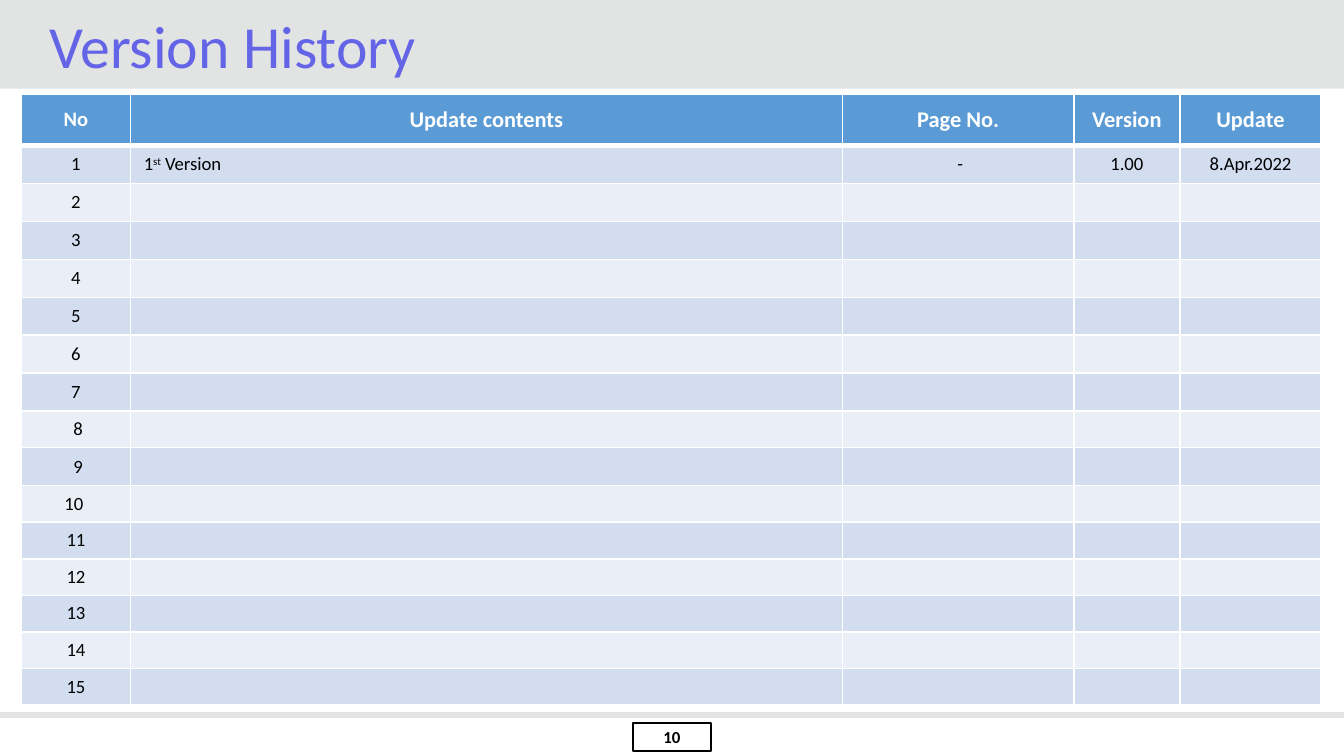
from lxml.etree import SubElement
from pptx import Presentation
from pptx.dml.color import RGBColor
from pptx.enum.shapes import MSO_CONNECTOR, MSO_SHAPE
from pptx.enum.text import MSO_ANCHOR, PP_ALIGN
from pptx.oxml.ns import qn
from pptx.util import Inches, Pt

WIDTH = 10
HEIGHT = WIDTH * 9 / 16
FONT = "Calibri"
COLORS = {
    "band": "E2E3E3",
    "title": "6464E6",
    "header": "5B9BD5",
    "odd": "D2DEEF",
    "even": "EAEFF7",
    "white": "FFFFFF",
    "black": "000000",
}

# Column shares and relative row heights of the history table
COLUMNS = [0.81, 5.3, 1.72, 0.79, 1.05]
ROWS = [0.38] + [0.28] * 7 + [0.27, 0.28] + [0.27] * 6
HEADINGS = ["No", "Update contents", "Page No.", "Version", "Update"]
FIRST_ENTRY = [[("1", 0), ("st", 30000), (" Version", 0)], " -", "1.00", "8.Apr.2022"]
NUMBERS = [str(number) for number in range(1, 8)] + [" 8", " 9", "10 "]
NUMBERS += [str(number) for number in range(11, 16)]


def color(name):
    return RGBColor.from_string(COLORS[name])


def write_text(frame, text, size=10, fill="black", bold=False,
               align=PP_ALIGN.CENTER, line_spacing=None):
    """Write a string, or a list of (string, baseline) runs, in one paragraph."""
    paragraph = frame.paragraphs[0]
    paragraph.alignment = align
    if line_spacing:
        paragraph.line_spacing = line_spacing
    runs = [(text, 0)] if isinstance(text, str) else text
    for words, baseline in runs:
        if not words:
            continue
        run = paragraph.add_run()
        run.text = words
        font = run.font
        font.name, font.size, font.bold = FONT, Pt(size), bold
        font.color.rgb = color(fill)
        if baseline:
            run._r.get_or_add_rPr().set("baseline", str(baseline))
    # The end mark sets the line height of an empty cell
    SubElement(paragraph._p, qn("a:endParaRPr")).set("sz", str(size * 100))


def set_margins(frame, left, top, right, bottom):
    frame.margin_left, frame.margin_top = Inches(left), Inches(top)
    frame.margin_right, frame.margin_bottom = Inches(right), Inches(bottom)
    frame.vertical_anchor = MSO_ANCHOR.MIDDLE
    frame.word_wrap = True


def add_rectangle(slide, box, fill=None, line=None):
    shape = slide.shapes.add_shape(MSO_SHAPE.RECTANGLE, *map(Inches, box))
    shape.shadow.inherit = False
    if fill:
        shape.fill.solid()
        shape.fill.fore_color.rgb = color(fill)
    else:
        shape.fill.background()
    if line:
        shape.line.color.rgb = color(line)
        shape.line.width = Pt(1)
    else:
        shape.line.fill.background()
    return shape


def add_title_band(slide, box):
    left, top, width, height = box
    add_rectangle(slide, box, fill="band")
    title = slide.shapes.add_textbox(
        Inches(left + 0.027 * width), Inches(top + 0.01),
        Inches(0.934 * width), Inches(height))
    set_margins(title.text_frame, 0.1, 0.05, 0.1, 0)
    write_text(title.text_frame, "Version History", size=32, fill="title",
               align=PP_ALIGN.LEFT, line_spacing=0.9)


def add_footer(slide, box):
    left, top, width, height = box
    # Rule along the top of the footer
    rule = slide.shapes.add_connector(
        MSO_CONNECTOR.STRAIGHT, Inches(left), Inches(top),
        Inches(left + width), Inches(top))
    rule.line.color.rgb = color("band")
    rule.line.width = Pt(3)
    SubElement(rule._element.spPr, qn("a:effectLst"))
    # Centred page number
    number_width = 0.058 * width
    page_number = add_rectangle(
        slide, (left + (width - number_width) / 2, top + 0.19 * height,
                number_width, 0.68 * height), line="black")
    set_margins(page_number.text_frame, 0.03, 0.03, 0.03, 0.03)
    write_text(page_number.text_frame, "10", size=9, bold=True)


def set_borders(cell, top, bottom):
    properties = cell._tc.get_or_add_tcPr()
    for side, width in (("L", 1), ("R", 1), ("T", top), ("B", bottom)):
        border = SubElement(properties, qn(f"a:ln{side}"), w=str(int(Pt(width))))
        fill = SubElement(border, qn("a:solidFill"))
        SubElement(fill, qn("a:srgbClr"), val=COLORS["white"])


def add_history_table(slide, box):
    left, top, width, height = box
    table = slide.shapes.add_table(
        len(ROWS), len(COLUMNS), *map(Inches, box)).table
    table.first_row = table.horz_banding = False
    for column, share in zip(table.columns, COLUMNS):
        column.width = Inches(width * share / sum(COLUMNS))
    for row, share in zip(table.rows, ROWS):
        row.height = Inches(height * share / sum(ROWS))

    blanks = [""] * (len(COLUMNS) - 1)
    entries = [[number] + blanks for number in NUMBERS]
    entries[0][1:] = FIRST_ENTRY
    for row_index, values in enumerate([HEADINGS] + entries):
        header = row_index == 0
        fill = "header" if header else "odd" if row_index % 2 else "even"
        for column_index, value in enumerate(values):
            cell = table.cell(row_index, column_index)
            set_borders(cell, top=3 if row_index == 1 else 1,
                        bottom=3 if header else 1)
            cell.fill.solid()
            cell.fill.fore_color.rgb = color(fill)
            cell.vertical_anchor = MSO_ANCHOR.MIDDLE
            if header:
                write_text(cell.text_frame, value, fill="white", bold=True,
                           size=12 if column_index else 11)
            else:
                write_text(cell.text_frame, value, align=PP_ALIGN.LEFT
                           if column_index == 1 else PP_ALIGN.CENTER)


def main():
    presentation = Presentation()
    presentation.slide_width = Inches(WIDTH)
    presentation.slide_height = Inches(HEIGHT)
    slide = presentation.slides.add_slide(presentation.slide_layouts[6])
    add_title_band(slide, (0, 0, WIDTH, 0.66))
    add_footer(slide, (0, 5.32, WIDTH, HEIGHT - 5.32))
    add_history_table(slide, (0.16, 0.7, 9.67, 4.55))
    presentation.save("out.pptx")


if __name__ == "__main__":
    main()
